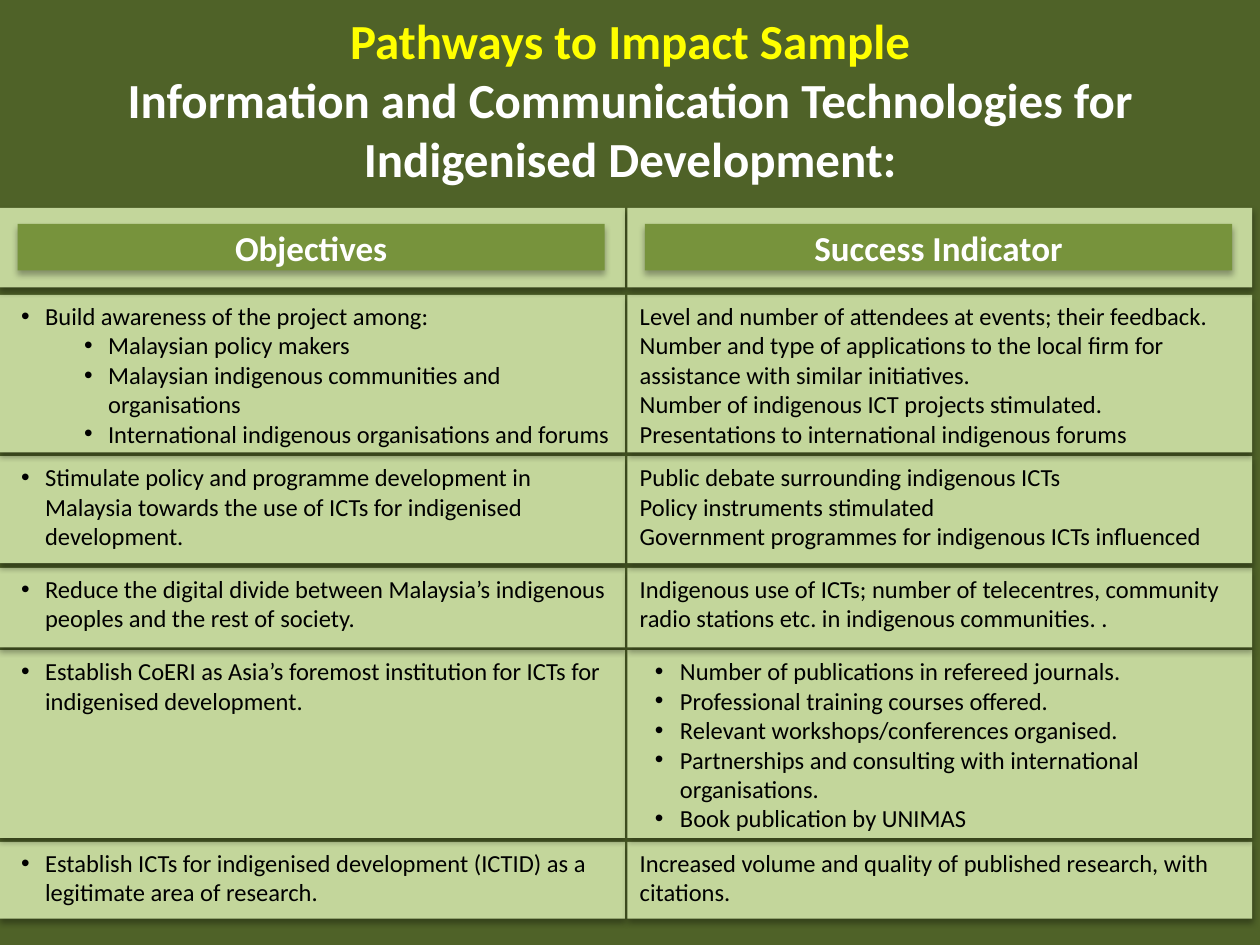
from lxml import etree
from pptx import Presentation
from pptx.dml.color import RGBColor
from pptx.enum.shapes import MSO_SHAPE as SHAPE
from pptx.enum.text import MSO_ANCHOR as ANCHOR, MSO_AUTO_SIZE as AUTO, PP_ALIGN as ALIGN
from pptx.oxml.ns import qn
from pptx.util import Pt

COL_X = (0, 358.5)
COL_W = 357.1
HEADERS = ("Objectives", "Success Indicator")

# Bullet styles: level, left margin, hanging indent
PLAIN = None
OBJECTIVE = (0, 18.7, -13.7)
AUDIENCE = (1, 54.7, -13.7)
OUTPUT = (0, 23, -14.4)

# Rows: top, height, objective lines, indicator lines
ROWS = [
    (168.5, 90,
     [("Build awareness of the project among:", OBJECTIVE),
      ("Malaysian policy makers", AUDIENCE),
      ("Malaysian indigenous communities and organisations", AUDIENCE),
      ("International indigenous organisations and forums", AUDIENCE)],
     [("Level and number of attendees at events; their feedback.", PLAIN),
      ("Number and type of applications to the local firm for assistance "
       "with similar initiatives.", PLAIN),
      ("Number of indigenous ICT projects stimulated.", PLAIN),
      ("Presentations to international indigenous forums", PLAIN)]),
    (260.6, 61.2,
     [("Stimulate policy and programme development in Malaysia towards "
       "the use of ICTs for indigenised development.", OBJECTIVE)],
     [("Public debate surrounding indigenous ICTs", PLAIN),
      ("Policy instruments stimulated", PLAIN),
      ("Government programmes for indigenous ICTs influenced", PLAIN)]),
    (324.5, 45.4,
     [("Reduce the digital divide between Malaysia’s indigenous peoples "
       "and the rest of society.", OBJECTIVE)],
     [("Indigenous use of ICTs; number of telecentres, community radio "
       "stations etc. in indigenous communities. .", PLAIN)]),
    (371.5, 107.3,
     [("Establish CoERI as Asia’s foremost institution for ICTs for "
       "indigenised development.", OBJECTIVE)],
     [("Number of publications in refereed journals.", OUTPUT),
      ("Professional training courses offered.", OUTPUT),
      ("Relevant workshops/conferences organised.", OUTPUT),
      ("Partnerships and consulting with international organisations.", OUTPUT),
      ("Book publication by UNIMAS", OUTPUT)]),
    (481, 43.9,
     [("Establish ICTs for indigenised development (ICTID) as a "
       "legitimate area of research.", OBJECTIVE)],
     [("Increased volume and quality of published research, with "
       "citations.", PLAIN)]),
]


def rgb(value):
    return RGBColor.from_string(value)


class Deck:
    font = "Calibri"
    back, panel, bar = "4F6228", "C3D69B", "77933C"
    white, black, yellow = "FFFFFF", "000000", "FFFF00"

    def __init__(self, prs):
        self.s = prs.slides.add_slide(prs.slide_layouts[5])
        fill = self.s.background.fill
        fill.solid()
        fill.fore_color.rgb = rgb(self.back)

    def style(self, r, size, color, bold=False):
        r.font.name, r.font.size, r.font.bold = self.font, Pt(size), bold
        r.font.color.rgb = rgb(color)

    def title(self, text, colors):
        sp = self.s.shapes.title
        sp.left, sp.top, sp.width, sp.height = Pt(36), Pt(11.5), Pt(648), Pt(90)
        tf = sp.text_frame
        tf.text = text
        tf.word_wrap, tf.auto_size = True, AUTO.NONE
        tf.vertical_anchor = ANCHOR.MIDDLE
        p = tf.paragraphs[0]
        p.alignment = ALIGN.CENTER
        for r, color in zip(p.runs, colors):
            self.style(r, 28, color, True)

    def rect(self, shapes, x, y, w, h, color):
        sp = shapes.add_shape(SHAPE.RECTANGLE, Pt(x), Pt(y), Pt(w), Pt(h))
        sp.fill.solid()
        sp.fill.fore_color.rgb = rgb(color)
        sp.line.fill.background()
        # Soft shadow straight below
        sp.shadow.inherit = False
        effects = sp._element.spPr.find(qn("a:effectLst"))
        shadow = etree.SubElement(
            effects, qn("a:outerShdw"), blurRad=str(Pt(3.5)), dist=str(Pt(2.2)),
            dir="5400000", algn="t", rotWithShape="0")
        clr = etree.SubElement(shadow, qn("a:srgbClr"), val=self.black)
        etree.SubElement(clr, qn("a:alpha"), val="32000")
        return sp

    def header(self, x, text):
        shapes = self.s.shapes.add_group_shape().shapes
        self.rect(shapes, x, 118.8, COL_W, 45.4, self.panel)
        tf = self.rect(shapes, x + 10.1, 128, 335.5, 26.6, self.bar).text_frame
        tf.text = text
        tf.vertical_anchor = ANCHOR.MIDDLE
        p = tf.paragraphs[0]
        p.alignment = ALIGN.CENTER
        self.style(p.runs[0], 20, self.white, True)

    def bullet(self, p, kind):
        p.level, margin, indent = kind
        pPr = p._p.get_or_add_pPr()
        pPr.set("marL", str(Pt(margin)))
        pPr.set("indent", str(Pt(indent)))
        etree.SubElement(pPr, qn("a:buFont"), typeface="Arial")
        etree.SubElement(pPr, qn("a:buChar"), char="•")

    def cell(self, x, y, h, lines):
        tf = self.rect(self.s.shapes, x, y, COL_W, h, self.panel).text_frame
        tf.text = "\n".join(text for text, _ in lines)
        tf.word_wrap = True
        tf.vertical_anchor = ANCHOR.TOP
        for p, (_, kind) in zip(tf.paragraphs, lines):
            p.alignment = ALIGN.LEFT
            if kind:
                self.bullet(p, kind)
            self.style(p.runs[0], 14, self.black)


def main():
    prs = Presentation()
    prs.slide_width, prs.slide_height = Pt(720), Pt(540)
    deck = Deck(prs)

    # Title
    deck.title("Pathways to Impact Sample\vInformation and Communication "
               "Technologies for Indigenised Development:",
               (deck.yellow, deck.white))

    # Two columns: rows from the bottom up, then the header
    for i, x in enumerate(COL_X):
        for y, h, *columns in reversed(ROWS):
            deck.cell(x, y, h, columns[i])
        deck.header(x, HEADERS[i])

    prs.save("out.pptx")


if __name__ == "__main__":
    main()
